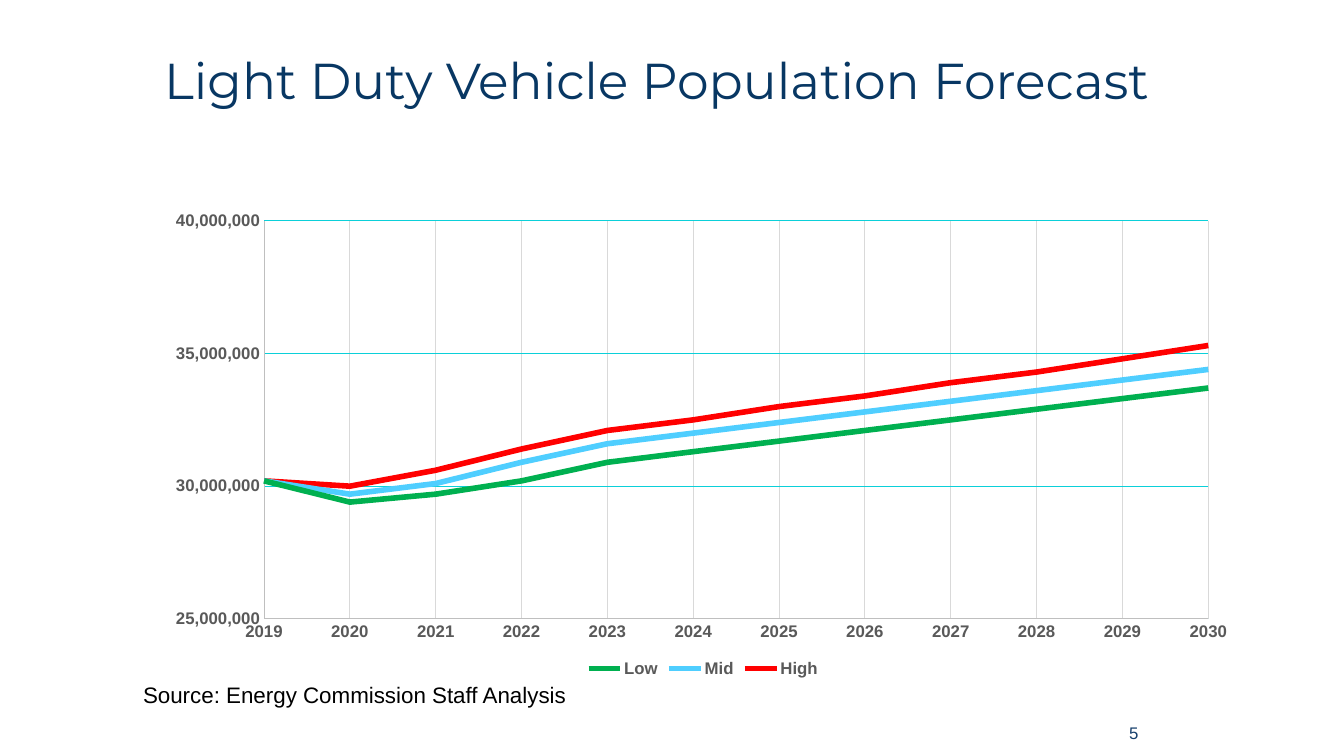
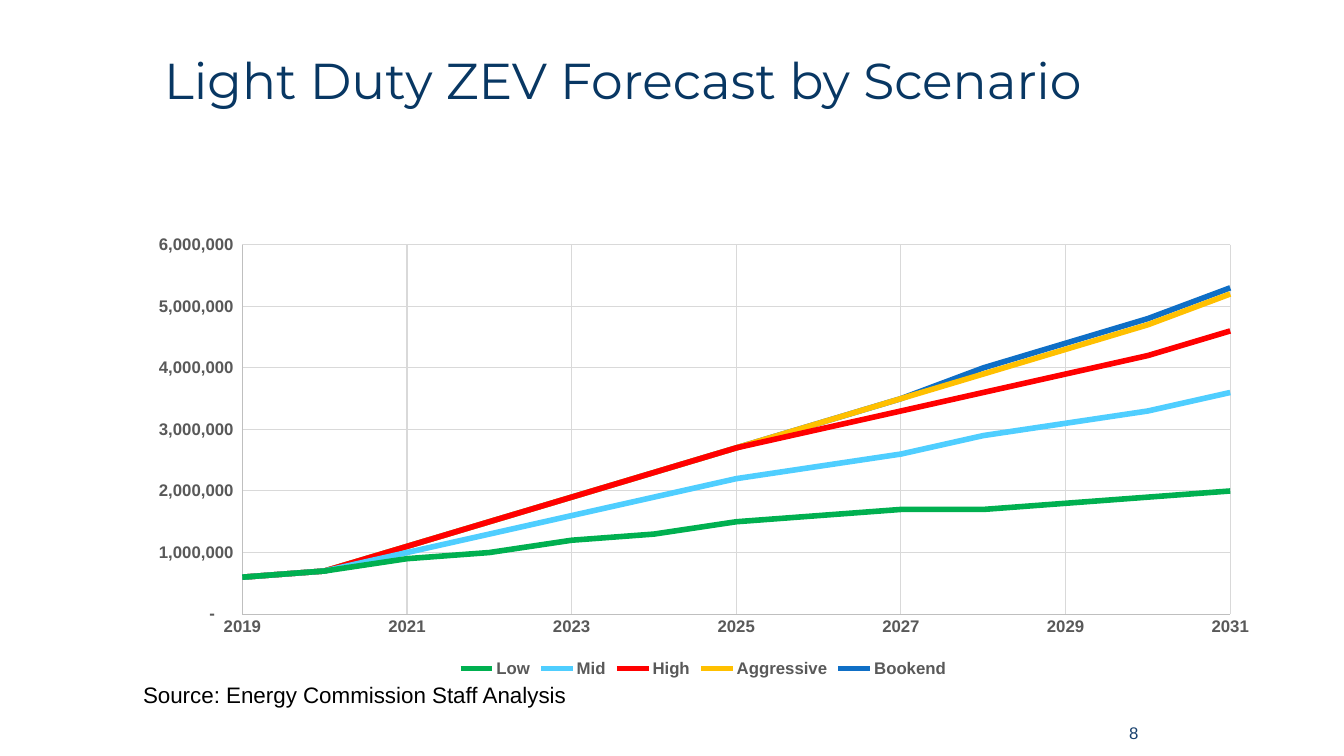
"""Build two slides of light duty vehicle forecasts as smooth scatter charts."""
from lxml.etree import SubElement
from pptx import Presentation
from pptx.chart.data import XyChartData
from pptx.dml.color import RGBColor
from pptx.enum.chart import XL_CHART_TYPE, XL_LEGEND_POSITION, XL_MARKER_STYLE, XL_TICK_MARK
from pptx.enum.text import MSO_ANCHOR, PP_ALIGN
from pptx.oxml.ns import qn
from pptx.util import Pt

PX = 9144
NAVY = RGBColor(0x08, 0x37, 0x63)
BLUE = RGBColor(0x17, 0x40, 0x6D)
BLACK = RGBColor(0, 0, 0)
GREY = RGBColor(0x59, 0x59, 0x59)
AXIS = RGBColor(0xBF, 0xBF, 0xBF)
GRID = RGBColor(0xD9, 0xD9, 0xD9)
DARK = RGBColor(0x95, 0x95, 0x95)
TEAL = RGBColor(0x0B, 0xD0, 0xD9)
COLORS = {
    "Low": RGBColor(0x00, 0xB0, 0x50),
    "Mid": RGBColor(0x4F, 0xCE, 0xFF),
    "High": RGBColor(0xFF, 0x00, 0x00),
    "Aggressive": RGBColor(0xFF, 0xC0, 0x00),
    "Bookend": RGBColor(0x0F, 0x6F, 0xC6),
}
MILLION = 1000000
START = 2019

TITLE = {"size": Pt(36), "name": "Montserrat"}
NUMBER = {"size": Pt(12), "name": "Arial"}
SOURCE = {"size": Pt(16), "name": "Arial"}
LABEL = {"size": Pt(12), "name": "Arial", "bold": True}

SLIDES = [
    {
        "title": "Light Duty Vehicle Population Forecast",
        "number": "5",
        "years": {"minimum_scale": START, "maximum_scale": 2030, "major_unit": 1},
        "counts": {"minimum_scale": 25 * MILLION, "maximum_scale": 40 * MILLION,
                   "major_unit": 5 * MILLION},
        "format": "#,##0",
        "grid": TEAL,
        "minor": DARK,
        "plot": {"x": 0.1, "y": 0.04, "w": 0.86, "h": 0.83},
        "series": {
            "Low": [30.2, 29.4, 29.7, 30.2, 30.9, 31.3, 31.7, 32.1, 32.5, 32.9, 33.3, 33.7],
            "Mid": [30.2, 29.7, 30.1, 30.9, 31.6, 32, 32.4, 32.8, 33.2, 33.6, 34, 34.4],
            "High": [30.2, 30, 30.6, 31.4, 32.1, 32.5, 33, 33.4, 33.9, 34.3, 34.8, 35.3],
        },
    },
    {
        "title": "Light Duty ZEV Forecast by Scenario",
        "number": "8",
        "years": {"minimum_scale": START, "maximum_scale": 2031, "major_unit": 2},
        "counts": {"minimum_scale": 0, "maximum_scale": 6 * MILLION, "major_unit": MILLION},
        "format": '_(* #,##0_);_(* (#,##0);_(* "-"??_);_(@_)',
        "grid": GRID,
        "minor": None,
        "plot": {"x": 0.08, "y": 0.09, "w": 0.9, "h": 0.77},
        "series": {
            "Low": [0.6, 0.7, 0.9, 1, 1.2, 1.3, 1.5, 1.6, 1.7, 1.7, 1.8, 1.9, 2],
            "Mid": [0.6, 0.7, 1, 1.3, 1.6, 1.9, 2.2, 2.4, 2.6, 2.9, 3.1, 3.3, 3.6],
            "High": [0.6, 0.7, 1.1, 1.5, 1.9, 2.3, 2.7, 3, 3.3, 3.6, 3.9, 4.2, 4.6],
            "Aggressive": [0.6, 0.7, 1.1, 1.5, 1.9, 2.3, 2.7, 3.1, 3.5, 3.9, 4.3, 4.7, 5.2],
            "Bookend": [0.6, 0.7, 1.1, 1.5, 1.9, 2.3, 2.7, 3.1, 3.5, 4, 4.4, 4.8, 5.3],
        },
    },
]


def style(font, color, values):
    for key, value in values.items():
        setattr(font, key, value)
    font.color.rgb = color


def write(slide, box, text, color, values, anchor=MSO_ANCHOR.MIDDLE, align=PP_ALIGN.LEFT):
    frame = slide.shapes.add_textbox(*[n * PX for n in box]).text_frame
    frame.word_wrap = True
    frame.vertical_anchor = anchor
    line = frame.paragraphs[0]
    line.alignment = align
    run = line.add_run()
    run.text = text
    style(run.font, color, values)
    return line


deck = Presentation()
deck.slide_width, deck.slide_height = 1333 * PX, 750 * PX

for page in SLIDES:
    slide = deck.slides.add_slide(deck.slide_layouts[6])
    title = write(slide, (153, 26, 1089, 114), page["title"], NAVY, TITLE)
    title.line_spacing = 0.9
    write(slide, (942, 707, 197, 40), page["number"], BLUE, NUMBER, align=PP_ALIGN.RIGHT)

    data = XyChartData()
    for name, counts in page["series"].items():
        series = data.add_series(name)
        for year, count in enumerate(counts, START):
            series.add_data_point(year, round(count * MILLION))
    chart = slide.shapes.add_chart(
        XL_CHART_TYPE.XY_SCATTER_SMOOTH_NO_MARKERS,
        *[n * PX for n in (153, 200, 1089, 476)], data).chart
    chart.has_title = False
    style(chart.font, BLACK, {"size": Pt(10), "name": "Arial"})
    chart.has_legend = True
    chart.legend.position = XL_LEGEND_POSITION.BOTTOM
    chart.legend.include_in_layout = False
    style(chart.legend.font, GREY, LABEL)

    plot = chart.plots[0]
    plot.vary_by_categories = False
    for series in plot.series:
        series.smooth = True
        series.marker.style = XL_MARKER_STYLE.NONE
        series.format.line.color.rgb = COLORS[series.name]
        series.format.line.width = Pt(4)

    years, counts = chart.category_axis, chart.value_axis
    for axis, scale, code, grid in ((years, page["years"], "General", GRID),
                                    (counts, page["counts"], page["format"], page["grid"])):
        for key, value in scale.items():
            setattr(axis, key, value)
        axis.major_tick_mark = axis.minor_tick_mark = XL_TICK_MARK.NONE
        axis.has_major_gridlines = True
        for line, color in ((axis.format.line, AXIS), (axis.major_gridlines.format.line, grid)):
            line.color.rgb = color
            line.width = Pt(0.75)
        axis.tick_labels.number_format = code
        axis.tick_labels.number_format_is_linked = False
        style(axis.tick_labels.font, GREY, LABEL)
    if page["minor"]:
        counts.has_minor_gridlines = True
        counts.minor_unit = 5 * MILLION
        minor = chart.element.find(".//" + qn("c:minorGridlines"))
        stroke = SubElement(SubElement(minor, qn("c:spPr")), qn("a:ln"), w=str(Pt(0.75)))
        fill = SubElement(stroke, qn("a:solidFill"))
        SubElement(fill, qn("a:srgbClr"), val=str(page["minor"]))

    area = chart.element.find(".//" + qn("c:plotArea"))
    layout = area.find(qn("c:layout"))
    if layout is None:
        layout = SubElement(area, qn("c:layout"))
        area.insert(0, layout)
    manual = SubElement(layout, qn("c:manualLayout"))
    rules = {"layoutTarget": "inner", "xMode": "edge", "yMode": "edge", **page["plot"]}
    for key, value in rules.items():
        SubElement(manual, qn("c:" + key)).set("val", str(value))

    write(slide, (132, 671, 442, 37), "Source: Energy Commission Staff Analysis",
          BLACK, SOURCE, anchor=MSO_ANCHOR.TOP)

deck.save("out.pptx")
